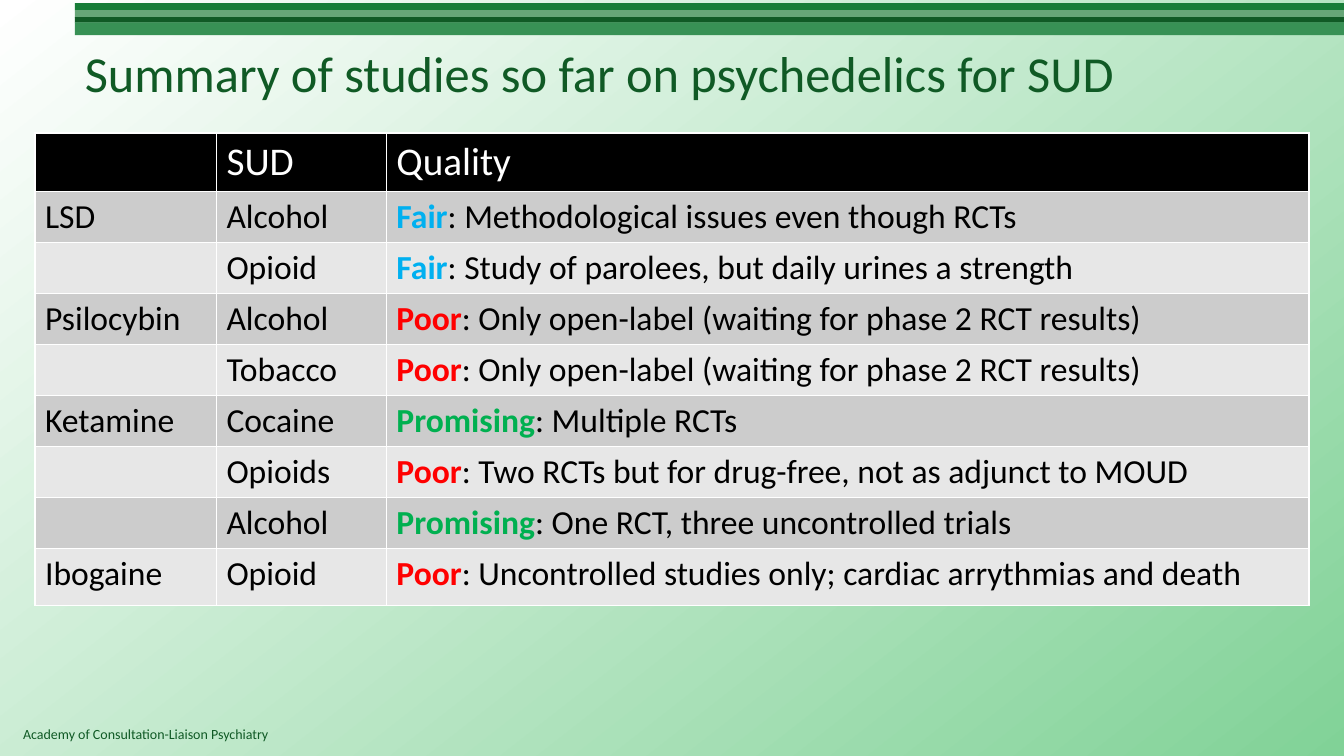
"""Build the slide summarising studies of psychedelics for substance use disorders."""
from pptx import Presentation
from pptx.dml.color import RGBColor
from pptx.enum.shapes import MSO_SHAPE
from pptx.enum.text import MSO_ANCHOR, MSO_AUTO_SIZE, PP_ALIGN
from pptx.util import Pt

WHITE = RGBColor(0xFF, 0xFF, 0xFF)
BLACK = RGBColor(0x00, 0x00, 0x00)
MINT = RGBColor(0x81, 0xD2, 0x97)
GREEN = RGBColor(0x17, 0x7D, 0x38)
SAGE = RGBColor(0x66, 0xA6, 0x77)
FOREST = RGBColor(0x10, 0x5A, 0x25)
LEAF = RGBColor(0x38, 0x91, 0x55)
DARK_BAND = RGBColor(0xCC, 0xCC, 0xCC)
LIGHT_BAND = RGBColor(0xE7, 0xE7, 0xE7)
RATING_COLORS = {
    "Fair": RGBColor(0x00, 0xB0, 0xF0),
    "Poor": RGBColor(0xFF, 0x00, 0x00),
    "Promising": RGBColor(0x00, 0xB0, 0x50),
}


def add_run(p, text, size=24, color=BLACK, bold=False):
    r = p.add_run()
    r.text = text
    r.font.name = "Calibri"
    r.font.size = Pt(size)
    r.font.color.rgb = color
    r.font.bold = bold


prs = Presentation()
prs.slide_width, prs.slide_height = Pt(960), Pt(540)
s = prs.slides.add_slide(prs.slide_layouts[5])

fill = s.background.fill
fill.gradient()
fill.gradient_angle = 308
for stop, color, position in zip(fill.gradient_stops, (WHITE, MINT), (0, 1)):
    stop.color.rgb = color
    stop.position = position

stripes = [(2.2, 5, GREEN), (7.2, 5.4, SAGE), (12.2, 4, FOREST), (16, 9.2, LEAF)]
for top, height, color in stripes:
    sp = s.shapes.add_shape(MSO_SHAPE.RECTANGLE, Pt(53.4), Pt(top), Pt(906.6), Pt(height))
    sp.shadow.inherit = False
    sp.fill.solid()
    sp.fill.fore_color.rgb = color
    sp.line.fill.background()

title = s.shapes.title
title.left, title.top, title.width, title.height = Pt(53.4), Pt(24), Pt(851), Pt(56)
tf = title.text_frame
tf.word_wrap = True
tf.auto_size = MSO_AUTO_SIZE.NONE
tf.vertical_anchor = MSO_ANCHOR.MIDDLE
p = tf.paragraphs[0]
p.alignment = PP_ALIGN.LEFT
add_run(p, "Summary of studies so far on psychedelics for SUD", size=36, color=FOREST)

footer = s.shapes.add_textbox(Pt(9.4), Pt(515), Pt(666), Pt(19.4))
footer.text_frame.word_wrap = True
add_run(footer.text_frame.paragraphs[0], "Academy of Consultation-Liaison Psychiatry",
        size=10, color=FOREST)

studies = [
    ("LSD", "Alcohol", "Fair", "Methodological issues even though RCTs"),
    ("", "Opioid", "Fair", "Study of parolees, but daily urines a strength"),
    ("Psilocybin", "Alcohol", "Poor", "Only open-label (waiting for phase 2 RCT results)"),
    ("", "Tobacco", "Poor", "Only open-label (waiting for phase 2 RCT results)"),
    ("Ketamine", "Cocaine", "Promising", "Multiple RCTs"),
    ("", "Opioids", "Poor", "Two RCTs but for drug-free, not as adjunct to MOUD"),
    ("", "Alcohol", "Promising", "One RCT, three uncontrolled trials"),
    ("Ibogaine", "Opioid", "Poor", "Uncontrolled studies only; cardiac arrythmias and death"),
]
heights = [41.8] + [36.4] * 7 + [41]
table = s.shapes.add_table(len(heights), 3, Pt(25), Pt(95), Pt(910), Pt(sum(heights))).table
for column, width in zip(table.columns, (129.6, 121.4, 659)):
    column.width = Pt(width)
for row, height in zip(table.rows, heights):
    row.height = Pt(height)

for i, row in enumerate(table.rows):
    for cell in row.cells:
        cell.fill.solid()
        cell.fill.fore_color.rgb = BLACK if i == 0 else DARK_BAND if i % 2 else LIGHT_BAND

for j, heading in enumerate(("SUD", "Quality"), start=1):
    add_run(table.cell(0, j).text_frame.paragraphs[0], heading, size=28, color=WHITE)

for i, (drug, disorder, rating, reason) in enumerate(studies, start=1):
    drug_p, disorder_p, quality_p = [c.text_frame.paragraphs[0] for c in table.rows[i].cells]
    if drug:
        add_run(drug_p, drug)
    add_run(disorder_p, disorder)
    add_run(quality_p, rating, color=RATING_COLORS[rating], bold=True)
    add_run(quality_p, f": {reason}")

prs.save("out.pptx")
